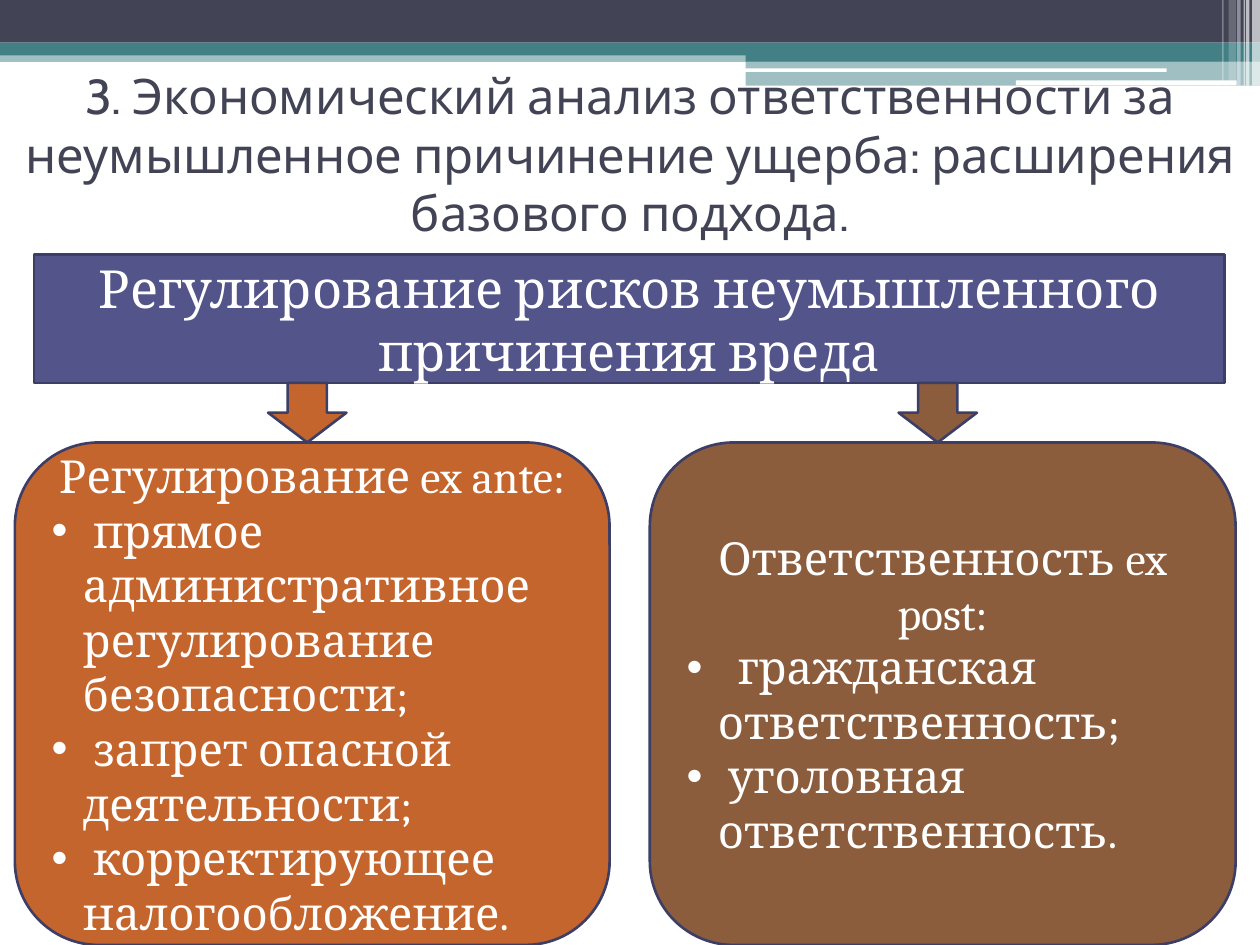
"""Builds a slide on regulating the risk of unintentional harm."""
import pptx
import pptx.util
import pptx.dml.color
import pptx.enum.shapes
import pptx.enum.text
from lxml import etree
from pptx.oxml.ns import qn

Cm, Pt = pptx.util.Cm, pptx.util.Pt
MSO = pptx.enum.shapes.MSO_SHAPE
ALIGN = pptx.enum.text.PP_ALIGN
ANCHOR = pptx.enum.text.MSO_ANCHOR

WIDTH, HEIGHT = 25.4, 19.05
WHITE, NAVY, TEAL, EDGE = "FFFFFF", "424456", "438086", "3D3E66"
TITLE = ("3. Экономический анализ ответственности за неумышленное "
         "причинение ущерба: расширения базового подхода.")
HEADER = "Регулирование рисков неумышленного причинения вреда"
HEADER_BOX = (0.69, 5.13, 24, 2.59)
CARD_TOP = 8.92
ARROW_W = 1.58
CARDS = [
    (0.3, 11.99, "C4652D", "Регулирование ex ante:",
     [" прямое административное регулирование безопасности;",
      " запрет опасной деятельности;",
      " корректирующее налогообложение."]),
    (13.1, 11.81, "8B5D3D", "Ответственность ex post:",
     ["  гражданская ответственность;",
      " уголовная ответственность."]),
]
BANDS = [
    (0, 1.02, WIDTH, 0.23, TEAL, 50),
    (0, 0, WIDTH, 0.86, NAVY, 100),
    (0, 0.86, WIDTH, 0.26, TEAL, 100),
    (15.03, 0.99, 10.37, 0.25, TEAL, 100),
    (15.03, 1.23, 10.37, 0.5, TEAL, 50),
]
PILLS = [(15.02, 1.38, 8.5, 0.07), (20.48, 1.62, 4.45, 0.1)]
STRIPES = [
    (25.24, 0.16, 1.73, 65),
    (25.12, 0.07, 1.73, 65),
    (25.07, 0.03, 1.73, 60),
    (24.94, 0.07, 1.73, 40),
    (24.77, 0.15, 1.63, 20),
    (24.64, 0.03, 1.63, 30),
]


def rgb(color):
    return pptx.dml.color.RGBColor.from_string(color)


def add_box(s, kind, box, color, alpha=100, line=None):
    sp = s.shapes.add_shape(kind, *map(Cm, box))
    sp.shadow.inherit = False
    sp.fill.solid()
    sp.fill.fore_color.rgb = rgb(color)
    if alpha < 100:
        clr = sp._element.spPr.find(qn("a:solidFill"))[0]
        etree.SubElement(clr, qn("a:alpha")).set("val", str(alpha * 1000))
    if line:
        sp.line.color.rgb = rgb(line)
        sp.line.width = Pt(1.5)
    else:
        sp.line.fill.background()
    return sp


def write(sp, lines, size, font, color, anchor):
    tf = sp.text_frame
    tf.word_wrap = True
    tf.vertical_anchor = anchor
    tf.text = "\n".join(lines)
    for i, p in enumerate(tf.paragraphs):
        p.alignment = ALIGN.LEFT if i else ALIGN.CENTER
        if i:
            add_bullet(p)
        for r in p.runs:
            r.font.size, r.font.name = Pt(size), font
            r.font.color.rgb = rgb(color)


def add_bullet(p):
    pPr = p._p.get_or_add_pPr()
    pPr.set("marL", str(Cm(0.63)))
    pPr.set("indent", str(-Cm(0.63)))
    etree.SubElement(pPr, qn("a:buFont")).set("typeface", "Arial")
    etree.SubElement(pPr, qn("a:buChar")).set("char", "•")


def main():
    prs = pptx.Presentation()
    prs.slide_width, prs.slide_height = Cm(WIDTH), Cm(HEIGHT)
    s = prs.slides.add_slide(prs.slide_layouts[6])

    for *box, color, alpha in BANDS:
        add_box(s, MSO.RECTANGLE, box, color, alpha)
    for box in PILLS:
        add_box(s, MSO.ROUNDED_RECTANGLE, box, WHITE)
    for x, w, h, alpha in STRIPES:
        add_box(s, MSO.RECTANGLE, (x, 0, w, h), WHITE, alpha)

    sp = add_box(s, MSO.RECTANGLE, HEADER_BOX, "53548A", line=EDGE)
    write(sp, [HEADER], 30, "Cambria", WHITE, ANCHOR.MIDDLE)

    arrow_top = HEADER_BOX[1] + HEADER_BOX[3]
    for x, w, color, head, items in CARDS:
        box = (x, CARD_TOP, w, HEIGHT - CARD_TOP)
        sp = add_box(s, MSO.ROUNDED_RECTANGLE, box, color, line=EDGE)
        write(sp, [head] + items, 26, "Cambria", WHITE, ANCHOR.MIDDLE)
        box = (x + (w - ARROW_W) / 2 - 0.1, arrow_top, ARROW_W, CARD_TOP - arrow_top)
        add_box(s, MSO.DOWN_ARROW, box, color, line=EDGE)

    sp = s.shapes.add_textbox(Cm(0), Cm(1.19), Cm(WIDTH), Cm(3.53))
    write(sp, [TITLE], 28, "Cabin", NAVY, ANCHOR.TOP)
    prs.save("out.pptx")


if __name__ == "__main__":
    main()
